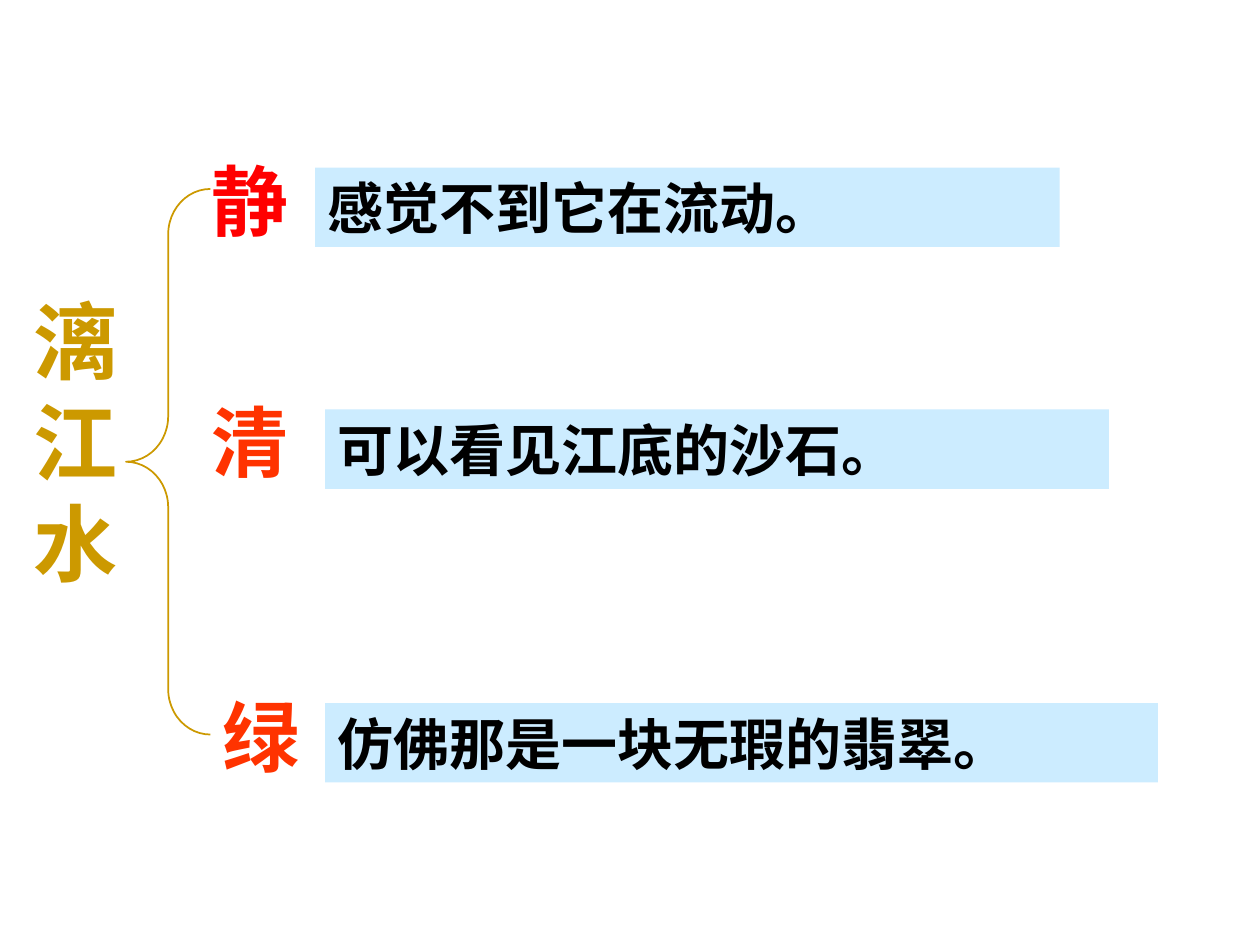
from dataclasses import dataclass

from pptx import Presentation
from pptx.dml.color import RGBColor
from pptx.enum.shapes import MSO_SHAPE
from pptx.enum.text import MSO_ANCHOR, MSO_AUTO_SIZE, PP_ALIGN
from pptx.shapes.autoshape import Shape
from pptx.slide import Slide
from pptx.util import Inches, Pt

FONT = "Times New Roman"
GOLD = RGBColor(0xCC, 0x99, 0x00)
RED = RGBColor(0xFF, 0x00, 0x00)
ORANGE_RED = RGBColor(0xFF, 0x33, 0x00)
PALE_BLUE = RGBColor(0xCC, 0xEC, 0xFF)
BLACK = RGBColor(0x00, 0x00, 0x00)


@dataclass(frozen=True)
class Quality:
    """One trait of the river: a key character and its explanation."""
    character: str
    color: RGBColor
    left: float
    top: float
    sentence: str
    bar_left: float
    bar_top: float
    bar_width: float


QUALITIES = [
    Quality("静", RED, 1.58, 1.17, "感觉不到它在流动。", 2.5, 1.33, 5.91),
    Quality("清", ORANGE_RED, 1.58, 3.08, "可以看见江底的沙石。", 2.58, 3.25, 6.22),
    Quality("绿", ORANGE_RED, 1.67, 5.42, "仿佛那是一块无瑕的翡翠。", 2.58, 5.58, 6.61),
]


def write_text(box: Shape, text: str, size: int, color: RGBColor, wrap: bool = True) -> None:
    frame = box.text_frame
    frame.word_wrap = wrap
    frame.auto_size = MSO_AUTO_SIZE.SHAPE_TO_FIT_TEXT
    frame.vertical_anchor = MSO_ANCHOR.TOP
    para = frame.paragraphs[0]
    para.text = text
    para.alignment = PP_ALIGN.LEFT
    para.font.name = FONT
    para.font.size = Pt(size)
    para.font.bold = True
    para.font.color.rgb = color


def add_title(page: Slide) -> None:
    box = page.shapes.add_textbox(Inches(0.17), Inches(2.25), Inches(1.08), Inches(5.17))
    write_text(box, "漓江水", 48, GOLD)


def add_brace(page: Slide) -> None:
    brace = page.shapes.add_shape(
        MSO_SHAPE.LEFT_BRACE, Inches(1), Inches(1.5), Inches(0.67), Inches(4.33))
    brace.adjustments[0] = 0.54
    brace.adjustments[1] = 0.5
    brace.shadow.inherit = False
    brace.fill.background()
    brace.line.color.rgb = GOLD
    brace.line.width = Pt(1)


def add_quality(page: Slide, quality: Quality) -> None:
    label = page.shapes.add_textbox(
        Inches(quality.left), Inches(quality.top), Inches(0.81), Inches(0.83))
    write_text(label, quality.character, 44, quality.color, wrap=False)

    bar = page.shapes.add_shape(
        MSO_SHAPE.RECTANGLE, Inches(quality.bar_left), Inches(quality.bar_top),
        Inches(quality.bar_width), Inches(0.63))
    bar.shadow.inherit = False
    bar.fill.solid()
    bar.fill.fore_color.rgb = PALE_BLUE
    bar.line.fill.background()
    write_text(bar, quality.sentence, 32, BLACK)


def main() -> None:
    deck = Presentation()
    deck.slide_width, deck.slide_height = Inches(10), Inches(7.5)
    page = deck.slides.add_slide(deck.slide_layouts[6])

    # Topic and the brace that opens it up
    add_title(page)
    add_brace(page)

    # The three qualities of the water
    for quality in QUALITIES:
        add_quality(page, quality)

    deck.save("out.pptx")


if __name__ == "__main__":
    main()
